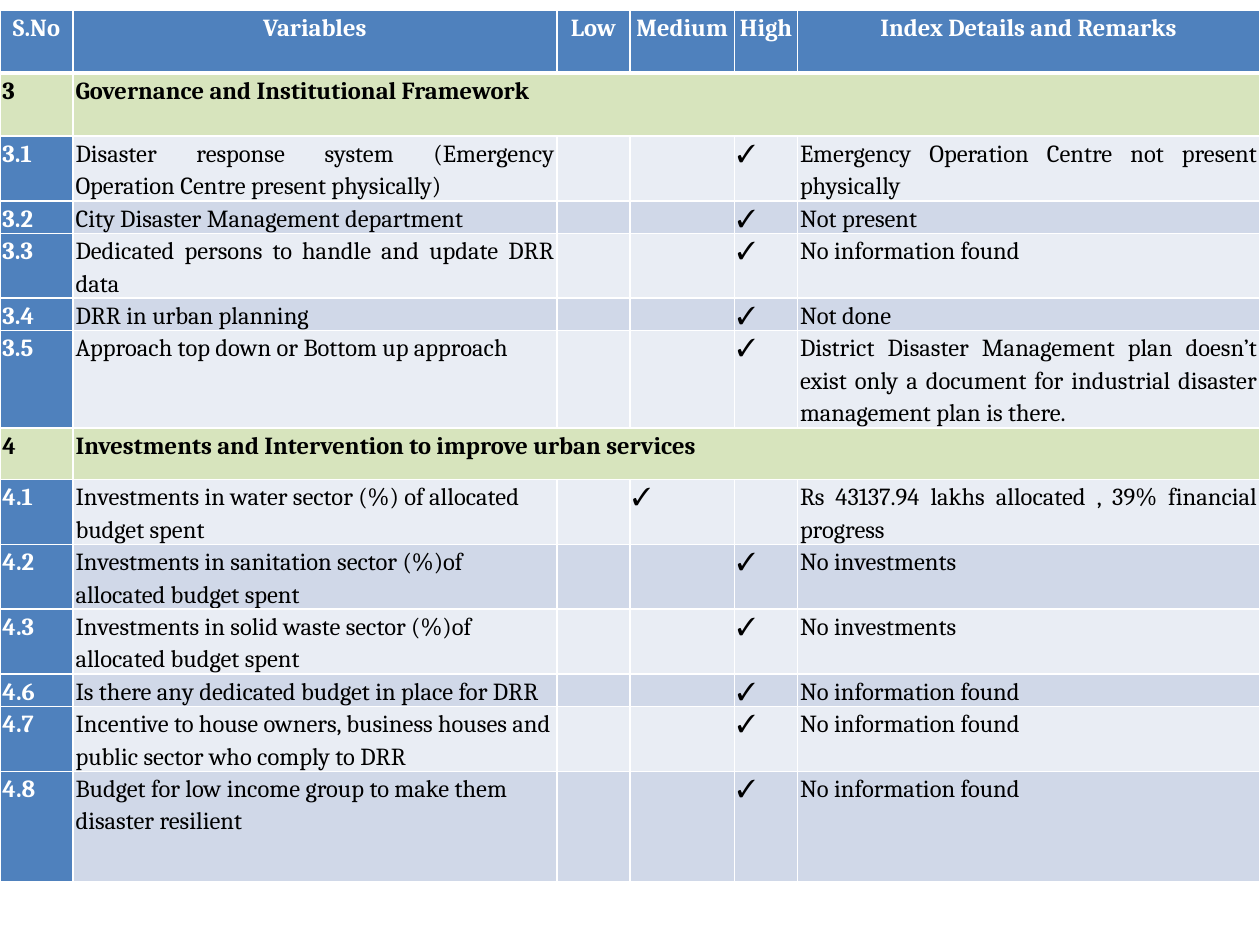
from dataclasses import dataclass
from lxml.etree import SubElement
from pptx import Presentation
from pptx.dml.color import RGBColor
from pptx.enum.text import PP_ALIGN
from pptx.oxml.ns import qn
from pptx.util import Inches, Pt


@dataclass(frozen=True)
class Theme:
    blue: str = "4F81BD"
    green: str = "D7E4BD"
    pale: str = "E9EDF4"
    mid: str = "D0D8E8"
    white: str = "FFFFFF"
    black: str = "000000"
    font: str = "Cambria"
    size: int = 14


THEME = Theme()
LEFT, MID, JUST = PP_ALIGN.LEFT, PP_ALIGN.CENTER, PP_ALIGN.JUSTIFY
COLS = [0.58, 3.84, 0.58, 0.83, 0.5, 3.67]
HEADS = ["S.No", "Variables", "Low", "Medium", "High", "Index Details and Remarks"]
LEVELS = HEADS[2:5]

# Each part: number, title, height, alignment of variables, rows
# Each row: number, variable, level, remark, least height
PARTS = [
    ("3", "Governance and Institutional Framework", 0.5, JUST, [
        ("3.1", "Disaster response system (Emergency Operation Centre present physically)",
         "High", "Emergency Operation Centre not present physically", 0.22),
        ("3.2", "City Disaster Management department", "High", "Not present", 0.17),
        ("3.3", "Dedicated persons to handle and update DRR data",
         "High", "No information found", 0.17),
        ("3.4", "DRR in urban planning", "High", "Not done", 0.06),
        ("3.5", "Approach top down or Bottom up approach", "High",
         "District Disaster Management plan doesn’t exist only a document for "
         "industrial disaster management plan is there.", 0.33),
    ]),
    ("4", "Investments and Intervention to improve urban services", 0.41, LEFT, [
        ("4.1", "Investments in water sector (%) of allocated budget spent",
         "Medium", "Rs 43137.94 lakhs allocated , 39% financial progress", 0.17),
        ("4.2", "Investments in sanitation sector (%)of allocated budget spent",
         "High", "No investments", 0.17),
        ("4.3", "Investments in solid waste sector (%)of allocated budget spent",
         "High", "No investments", 0.17),
        ("4.6", "Is there any dedicated budget in place for DRR",
         "High", "No information found", 0.17),
        ("4.7", "Incentive to house owners, business houses and public sector who comply to DRR",
         "High", "No information found", 0.28),
        ("4.8", "Budget for low income group to make them disaster resilient",
         "High", "No information found", 0.88),
    ]),
]


def edge(cell, base):
    """Draw white borders; base is the width of the bottom one."""
    props = cell._tc.get_or_add_tcPr()
    for side, width in (("L", 1), ("R", 1), ("T", 1), ("B", base)):
        line = SubElement(props, qn(f"a:ln{side}"), w=str(Pt(width)))
        fill = SubElement(line, qn("a:solidFill"))
        SubElement(fill, qn("a:srgbClr"), val=THEME.white)


def put(cell, text, fill, ink=THEME.black, bold=False, align=JUST, base=1):
    """Fill and style one cell."""
    edge(cell, base)
    cell.fill.solid()
    cell.fill.fore_color.rgb = RGBColor.from_string(fill)
    cell.margin_left = cell.margin_right = Inches(0.02)
    cell.margin_top = cell.margin_bottom = 0
    para = cell.text_frame.paragraphs[0]
    if text:
        para.text = text
    para.alignment = align
    para.line_spacing = 1.15
    font = para.font
    font.name, font.size, font.bold = THEME.font, Pt(THEME.size), bold
    font.color.rgb = RGBColor.from_string(ink)


def head(cells):
    for cell, text in zip(cells, HEADS):
        put(cell, text, THEME.blue, THEME.white, True, MID, base=3)


def band(cells, num, title):
    """Section row, its title spanning all but the first column."""
    for cell, text in zip(cells, [num, title] + [""] * 4):
        put(cell, text, THEME.green, bold=True)
    cells[1].merge(cells[-1])


def item(cells, row, fill, align):
    num, name, level, note, _ = row
    put(cells[0], num, THEME.blue, THEME.white, True)
    put(cells[1], name, fill, align=align)
    for cell, label in zip(cells[2:5], LEVELS):
        put(cell, "✓" if label == level else "", fill)
    put(cells[5], note, fill)


def grid(slide, left, top, width, height):
    """Place the whole index table in the given box."""
    count = 1 + sum(1 + len(part[-1]) for part in PARTS)
    frame = slide.shapes.add_table(count, len(COLS), left, top, width, height)
    table = frame.table
    table.first_row = table.horz_banding = False
    for col, size in zip(table.columns, COLS):
        col.width = Inches(size)

    lines = iter(table.rows)

    def take(size):
        line = next(lines)
        line.height = Inches(size)
        return list(line.cells)

    head(take(0.5))
    for num, title, size, align, rows in PARTS:
        band(take(size), num, title)
        for i, row in enumerate(rows):
            item(take(row[-1]), row, (THEME.pale, THEME.mid)[i % 2], align)
    frame.height = height


def main():
    deck = Presentation()
    deck.slide_width, deck.slide_height = Inches(10), Inches(7.5)
    slide = deck.slides.add_slide(deck.slide_layouts[6])
    grid(slide, Inches(0), Inches(0.08), Inches(10), Inches(7.39))
    deck.save("out.pptx")


if __name__ == "__main__":
    main()
